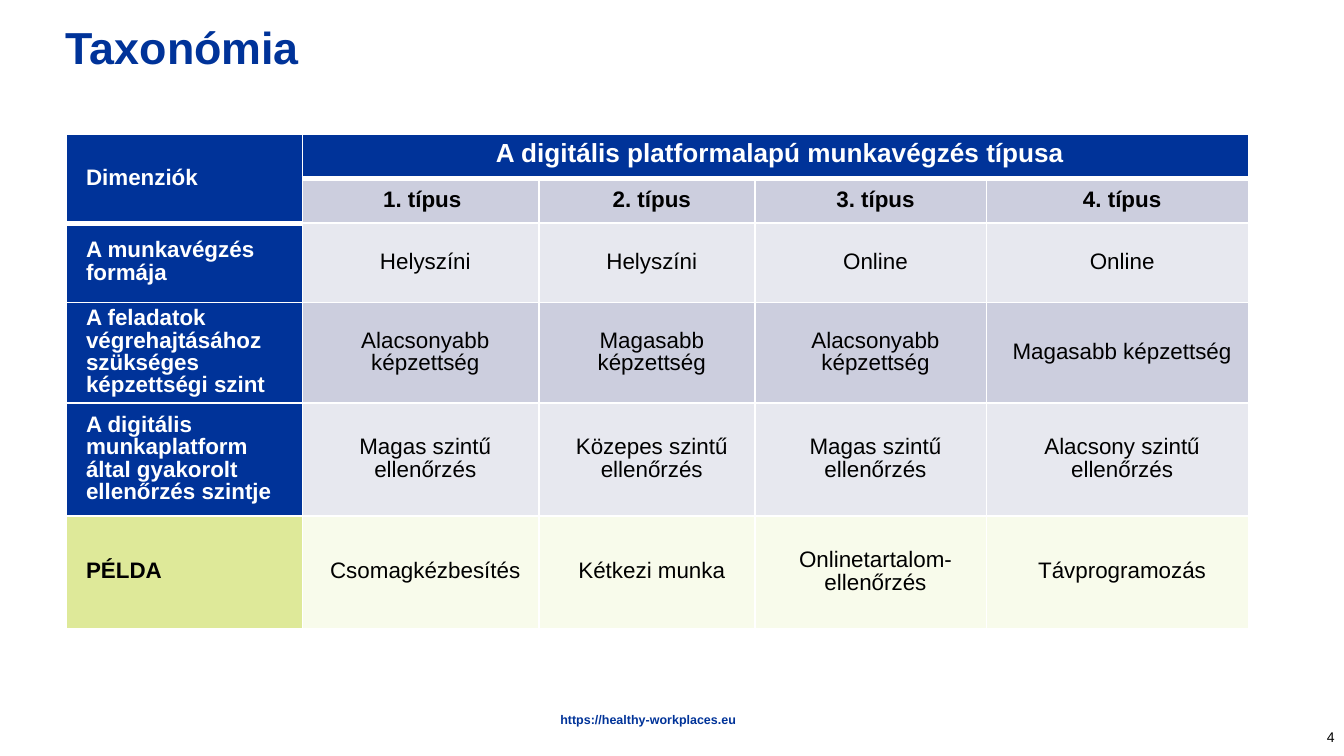
from lxml import etree
from pptx import Presentation
from pptx.dml.color import RGBColor
from pptx.enum.text import MSO_ANCHOR, PP_ALIGN
from pptx.oxml.ns import qn
from pptx.util import Inches, Pt

LEFT, CENTER, RIGHT = PP_ALIGN.LEFT, PP_ALIGN.CENTER, PP_ALIGN.RIGHT
TOP, MIDDLE = MSO_ANCHOR.TOP, MSO_ANCHOR.MIDDLE

BLUE = RGBColor(0x00, 0x33, 0x99)
WHITE = RGBColor(0xFF, 0xFF, 0xFF)
BLACK = RGBColor(0x00, 0x00, 0x00)
GREY = RGBColor(0xCC, 0xCE, 0xDE)
PALE_GREY = RGBColor(0xE7, 0xE8, 0xEF)
GREEN = RGBColor(0xDE, 0xE9, 0x99)
PALE_GREEN = RGBColor(0xF8, 0xFB, 0xEB)

TITLE = "Taxonómia"
FOOTER = "https://healthy-workplaces.eu"
PAGE_NUMBER = "4"

ROWS = [
    ["Dimenziók", "A digitális platformalapú munkavégzés típusa", "", "", ""],
    ["", "1. típus ", "2. típus", "3. típus", "4. típus"],
    ["A munkavégzés formája", "Helyszíni", "Helyszíni", "Online", "Online"],
    ["A feladatok végrehajtásához szükséges képzettségi szint",
     "Alacsonyabb képzettség", "Magasabb képzettség",
     "Alacsonyabb képzettség", "Magasabb képzettség"],
    ["A digitális munkaplatform által gyakorolt ellenőrzés szintje",
     "Magas szintű ellenőrzés", "Közepes szintű ellenőrzés",
     "Magas szintű ellenőrzés", "Alacsony szintű ellenőrzés"],
    ["PÉLDA", "Csomagkézbesítés", "Kétkezi munka",
     "Onlinetartalom-ellenőrzés", "Távprogramozás"],
]
ROW_FILLS = [(BLUE, BLUE), (BLUE, GREY), (BLUE, PALE_GREY),
             (BLUE, GREY), (BLUE, PALE_GREY), (GREEN, PALE_GREEN)]
COLUMN_WIDTHS = [1.76, 1.76, 1.61, 1.72, 1.95]
ROW_HEIGHTS = [0.33, 0.33, 0.59, 0.75, 0.84, 0.84]
HEADER_ROWS = 2


def write(frame, text, size, color=BLACK, bold=False, align=LEFT, spacing=None):
    frame.word_wrap = True
    para = frame.paragraphs[0]
    para.alignment = align
    para.line_spacing = spacing
    span = para.add_run()
    span.text = text
    span.font.name = "Arial"
    span.font.size = Pt(size)
    span.font.bold = bold
    span.font.color.rgb = color


def add_text(page, text, place, margins, anchor, **style):
    box = page.shapes.add_textbox(*map(Inches, place))
    frame = box.text_frame
    (frame.margin_left, frame.margin_top,
     frame.margin_right, frame.margin_bottom) = map(Inches, margins)
    frame.vertical_anchor = anchor
    write(frame, text, **style)


def set_borders(cell, top, bottom):
    properties = cell._tc.get_or_add_tcPr()
    sides = [("a:lnL", 1), ("a:lnR", 1), ("a:lnT", top), ("a:lnB", bottom)]
    for index, (tag, width) in enumerate(sides):
        line = etree.Element(qn(tag), w=str(Pt(width)))
        fill = etree.SubElement(line, qn("a:solidFill"))
        etree.SubElement(fill, qn("a:srgbClr"), val=str(WHITE))
        properties.insert(index, line)


def add_taxonomy(page):
    table = page.shapes.add_table(
        len(ROWS), len(COLUMN_WIDTHS), Inches(0.49), Inches(1),
        Inches(sum(COLUMN_WIDTHS)), Inches(sum(ROW_HEIGHTS))).table
    for column, width in zip(table.columns, COLUMN_WIDTHS):
        column.width = Inches(width)
    for row, height in zip(table.rows, ROW_HEIGHTS):
        row.height = Inches(height)
    table.cell(0, 0).merge(table.cell(1, 0))
    table.cell(0, 1).merge(table.cell(0, 4))

    for r, texts in enumerate(ROWS):
        for c, text in enumerate(texts):
            cell = table.cell(r, c)
            label = c == 0
            fill = ROW_FILLS[r][0 if label else 1]
            cell.fill.solid()
            cell.fill.fore_color.rgb = fill
            cell.vertical_anchor = MIDDLE
            cell.margin_left = Inches(0.15 if label else 0.14)
            cell.margin_right = Inches(0.07)
            cell.margin_top = cell.margin_bottom = 0
            thick_row = 1 if label else 0
            set_borders(cell, 3 if r == thick_row + 1 else 1,
                        3 if r == thick_row else 1)
            if text:
                write(cell.text_frame, text, 14 if (r, c) == (0, 1) else 12,
                      color=WHITE if fill == BLUE else BLACK,
                      bold=label or r < HEADER_ROWS,
                      align=LEFT if label else CENTER, spacing=Pt(12))


def main():
    deck = Presentation()
    deck.slide_width = Inches(10)
    deck.slide_height = deck.slide_width * 9 // 16
    page = deck.slides.add_slide(deck.slide_layouts[6])
    add_text(page, PAGE_NUMBER, (9.33, 5.33, 0.67, 0.3),
             (0.07, 0.04, 0.07, 0.04), MIDDLE, size=7.5, align=RIGHT)
    add_text(page, FOOTER, (1.52, 5.31, 6.61, 0.09), (0, 0, 0, 0), TOP,
             size=6.75, color=BLUE, bold=True, align=CENTER, spacing=0.9)
    add_text(page, TITLE, (0.49, 0.15, 8.27, 0.4), (0, 0.05, 0.1, 0.05),
             MIDDLE, size=24, color=BLUE, bold=True)
    add_taxonomy(page)
    deck.save("out.pptx")


if __name__ == "__main__":
    main()
